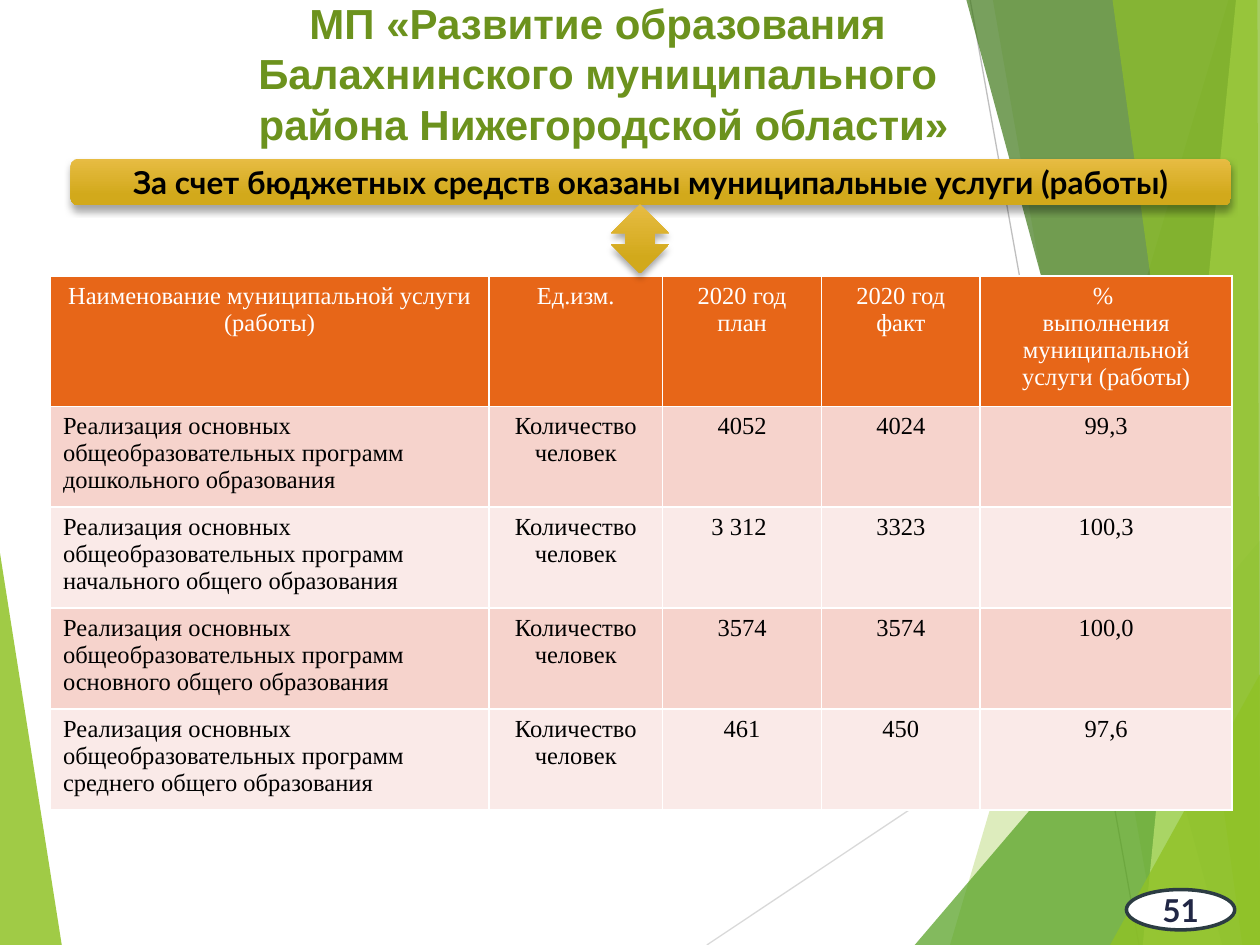
from lxml import etree
from pptx import Presentation
from pptx import util as u
from pptx.dml.color import RGBColor
from pptx.enum import shapes, text
from pptx.oxml.ns import qn

COLORS = {
    "white": "FFFFFF", "black": "000000", "title": "6C921D",
    "lime": "90C226", "green": "54A021", "dark_green": "3F7819", "pale": "C0E474",
    "gold_top": "E7BC43", "gold_bottom": "D2A91B",
    "header": "E76618", "band_dark": "F6D3CC", "band_light": "FAEAE8",
    "badge_line": "2C3C43", "badge_text": "212745",
    "line_light": "D9D9D9", "line_dark": "BFBFBF",
}
CENTER, LEFT = text.PP_ALIGN.CENTER, text.PP_ALIGN.LEFT
MIDDLE = text.MSO_ANCHOR.MIDDLE


def rgb(name):
    return RGBColor.from_string(COLORS[name])


def child(parent, tag, **attrs):
    return etree.SubElement(parent, qn(tag), {k: str(v) for k, v in attrs.items()})


def write(tf, content, font="Lato", size=18, color="black", bold=False,
          align=CENTER, anchor=None, wrap=True):
    """Fill a text frame, one paragraph per line of content."""
    tf.word_wrap = wrap
    if anchor is not None:
        tf.vertical_anchor = anchor
    for i, line in enumerate(content.split("\n")):
        p = tf.add_paragraph() if i else tf.paragraphs[0]
        p.alignment = align
        r = p.add_run()
        r.text = line
        r.font.name, r.font.size, r.font.bold = font, u.Pt(size), bold
        r.font.color.rgb = rgb(color)


class SlideBuilder:
    def __init__(self, slide):
        self.s = slide

    def facet(self, points, color, opacity):
        """Translucent polygon of the background."""
        start, *rest = [(u.Inches(x), u.Inches(y)) for x, y in points]
        fb = self.s.shapes.build_freeform(*start)
        fb.add_line_segments(rest, close=True)
        sp = fb.convert_to_shape()
        sp.shadow.inherit = False
        sp.fill.solid()
        sp.fill.fore_color.rgb = rgb(color)
        clr = sp._element.spPr.find(qn("a:solidFill"))[0]
        child(clr, "a:alpha", val=opacity * 1000)
        sp.line.fill.background()

    def line(self, x1, y1, x2, y2, color, width=0.75):
        cx = self.s.shapes.add_connector(
            shapes.MSO_CONNECTOR.STRAIGHT, *map(u.Inches, (x1, y1, x2, y2)))
        cx.line.color.rgb = rgb(color)
        cx.line.width = u.Pt(width)
        child(cx._element.spPr, "a:effectLst")

    def shape(self, kind, box):
        sp = self.s.shapes.add_shape(kind, *map(u.Inches, box))
        sp.shadow.inherit = False
        return sp

    def gold(self, kind, box):
        """Gold gradient shape with a soft shadow below."""
        sp = self.shape(kind, box)
        sp.line.fill.background()
        sp.fill.gradient()
        sp.fill.gradient_angle = 270
        stops = zip(sp.fill.gradient_stops, ("gold_top", "gold_bottom"), (0, 0.78))
        for stop, color, position in stops:
            stop.color.rgb = rgb(color)
            stop.position = position
        effects = sp._element.spPr.find(qn("a:effectLst"))
        shadow = child(effects, "a:outerShdw", blurRad=u.Pt(4), dist=u.Pt(3),
                       dir=5400000, rotWithShape=0)
        child(child(shadow, "a:srgbClr", val=COLORS["black"]), "a:alpha", val=35000)
        return sp

    def badge(self, content, box):
        sp = self.shape(shapes.MSO_SHAPE.OVAL, box)
        sp.fill.solid()
        sp.fill.fore_color.rgb = rgb("white")
        sp.line.color.rgb = rgb("badge_line")
        sp.line.width = u.Pt(2)
        write(sp.text_frame, content, color="badge_text", bold=True,
              anchor=MIDDLE, wrap=False)

    def title(self, content, box):
        tb = self.s.shapes.add_textbox(*map(u.Inches, box))
        write(tb.text_frame, content, font="Arial", size=24, color="title", bold=True)

    def cell(self, cell, content, fill, color, align):
        tcPr = cell._tc.get_or_add_tcPr()
        for side in ("L", "R", "T", "B"):
            ln = child(tcPr, f"a:ln{side}", w=u.Pt(1))
            child(child(ln, "a:solidFill"), "a:srgbClr", val=COLORS["white"])
        cell.fill.solid()
        cell.fill.fore_color.rgb = rgb(fill)
        write(cell.text_frame, content, font="Times New Roman", size=14,
              color=color, align=align)

    def table(self, left, top, widths, heights, rows):
        size = map(u.Inches, (left, top, sum(widths), sum(heights)))
        tbl = self.s.shapes.add_table(len(rows), len(widths), *size).table
        for col, width in zip(tbl.columns, widths):
            col.width = u.Inches(width)
        for i, (row, height) in enumerate(zip(rows, heights)):
            tbl.rows[i].height = u.Inches(height)
            fill = "header" if i == 0 else "band_dark" if i % 2 else "band_light"
            for j, content in enumerate(row):
                self.cell(tbl.cell(i, j), content, fill,
                          "black" if i else "white",
                          LEFT if i and j == 0 else CENTER)


def main():
    prs = Presentation()
    prs.slide_width, prs.slide_height = u.Inches(10), u.Inches(7.5)
    b = SlideBuilder(prs.slides.add_slide(prs.slide_layouts[6]))

    # Background facets and thin lines
    b.facet([(0, 4.39), (0.49, 7.5), (0, 7.5)], "lime", 85)
    b.line(5.61, 7.5, 10, 4.57, "line_light")
    b.line(7.7, 0, 9.04, 7.5, "line_dark")
    for points, color, opacity in [
        ([(9.75, 0), (7.54, 7.5), (10, 7.5), (10, 0)], "lime", 30),
        ([(7.88, 0), (9.19, 7.5), (10, 7.5), (10, 0)], "lime", 20),
        ([(7.26, 7.5), (10, 4.29), (10, 7.5)], "green", 72),
        ([(7.67, 0), (9.7, 7.5), (10, 7.5), (10, 0)], "dark_green", 70),
        ([(9.81, 0), (9.07, 7.5), (10, 7.5), (10, 0)], "pale", 70),
        ([(8.83, 0), (9.86, 7.5), (10, 7.5), (9.98, 0)], "lime", 65),
        ([(8.81, 7.5), (10, 5.35), (10, 7.5)], "lime", 80),
    ]:
        b.facet(points, color, opacity)

    # Page number, title and banner
    b.badge("51", (8.94, 7.06, 0.86, 0.32))
    b.title("МП «Развитие образования \nБалахнинского муниципального \n"
            "района Нижегородской области»", (0.93, -0.07, 7.72, 1.31))
    banner = b.gold(shapes.MSO_SHAPE.ROUNDED_RECTANGLE, (0.56, 1.26, 9.21, 0.37))
    write(banner.text_frame,
          "За счет бюджетных средств оказаны муниципальные услуги (работы)",
          bold=True, anchor=MIDDLE)

    # Services table
    header = ["Наименование муниципальной услуги (работы)", "Ед.изм.",
              "2020 год\nплан", "2020 год\nфакт",
              "% \nвыполнения муниципальной услуги (работы)"]
    services = [
        ("дошкольного", "4052", "4024", "99,3"),
        ("начального общего", "3 312 ", "3323", "100,3"),
        ("основного общего", "3574", "3574", "100,0"),
        ("среднего общего", "461", "450", "97,6"),
    ]
    rows = [header] + [
        [f"Реализация основных общеобразовательных программ {level} образования",
         "Количество человек", *values]
        for level, *values in services]
    b.table(0.4, 2.19, [3.48, 1.38, 1.26, 1.26, 2], [1.03] + [0.8] * len(services), rows)

    # Arrow between the banner and the table
    b.gold(shapes.MSO_SHAPE.UP_DOWN_ARROW, (4.85, 1.62, 0.46, 0.55))

    prs.save("out.pptx")


if __name__ == "__main__":
    main()
